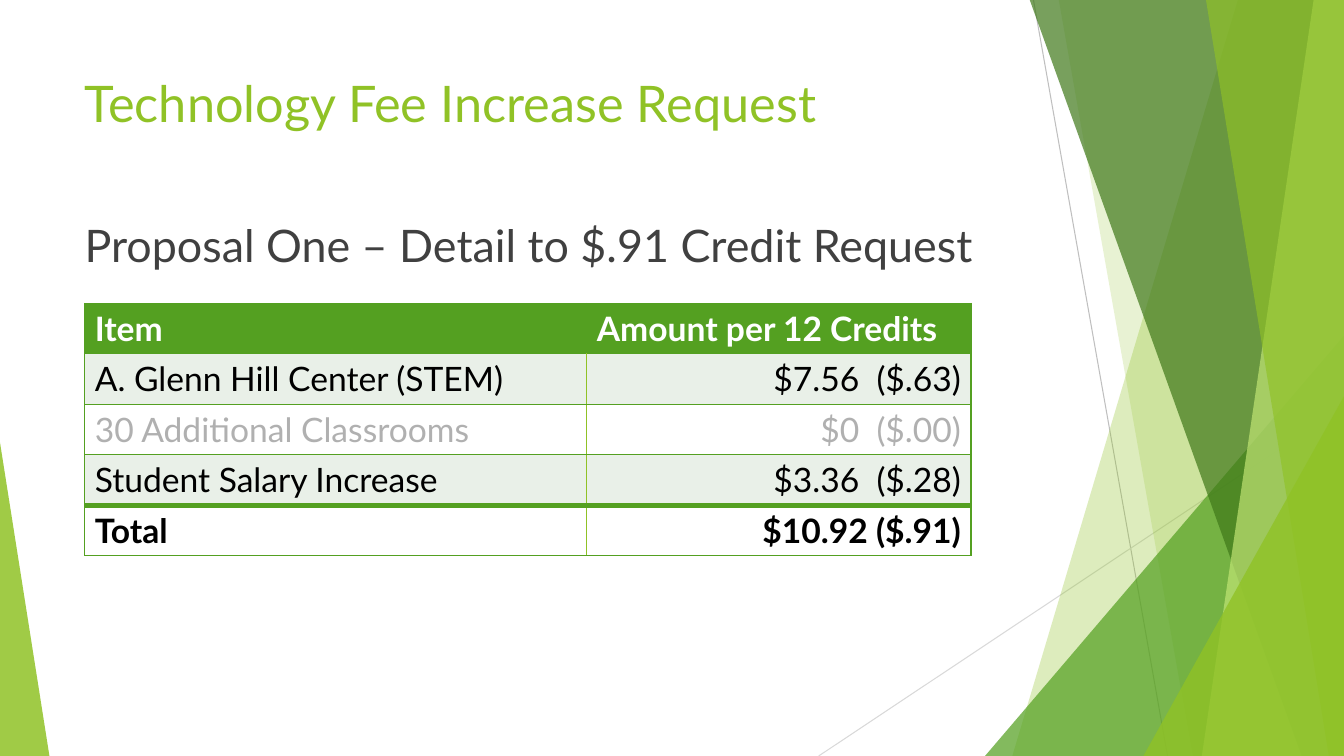
"""Build the technology fee slide: faceted green backdrop, title and fee table."""
from dataclasses import dataclass

from lxml.etree import SubElement
from pptx import Presentation
from pptx.dml.color import RGBColor
from pptx.enum.shapes import MSO_CONNECTOR, MSO_SHAPE
from pptx.enum.text import MSO_ANCHOR, PP_ALIGN
from pptx.oxml.ns import qn
from pptx.util import Inches, Pt

FONT = "Lato"
LIME, GREEN, DARK, PALE = "90C226", "54A021", "3F7819", "C0E474"
WHITE, BLACK, BAND, MUTED, TEXT = "FFFFFF", "000000", "E9F0E8", "B0B0B0", "404040"
WIDTH, HEIGHT, TOP = 13.33, 7.5, -0.01
TABLE_LEFT, TABLE_TOP, ROW_HEIGHT = 0.84, 3.01, 0.5
COLUMNS = (4.98, 3.81)


@dataclass
class Ray:
    start: tuple[float, float]
    end: tuple[float, float]
    color: str


@dataclass
class Facet:
    top_x: float
    bottom_x: float
    color: str
    alpha: int


@dataclass
class Corner:
    left: float
    top: float
    width: float
    peak: float
    color: str
    alpha: int


@dataclass
class FeeRow:
    item: str
    amount: str
    fill: str
    color: str
    bold: bool = False
    top_line: float = 1


RAYS = [
    Ray((10.25, 0), (11.58, HEIGHT), "BFBFBF"),
    Ray((WIDTH, 4.03), (8.12, HEIGHT), "D9D9D9"),
]
BACKDROP = [
    Facet(12.28, 10.04, LIME, 30),
    Facet(10.5, 11.83, LIME, 20),
    Corner(9.77, 3.33, 3.56, 1, GREEN, 72),
    Facet(10.21, 12.91, DARK, 70),
    Facet(13.03, 11.92, PALE, 70),
    Facet(11.96, 13.18, LIME, 65),
    Corner(11.34, 3.93, 1.99, 1, LIME, 80),
    Corner(0, 4.39, 0.49, 0, LIME, 85),
]
FEES = [
    FeeRow("Item", "Amount per 12 Credits", GREEN, WHITE, bold=True),
    FeeRow("A. Glenn Hill Center (STEM)", "$7.56  ($.63)", BAND, BLACK),
    FeeRow("30 Additional Classrooms", "$0  ($.00)", WHITE, MUTED),
    FeeRow("Student Salary Increase", "$3.36  ($.28)", BAND, BLACK),
    FeeRow("Total", "$10.92 ($.91)", WHITE, BLACK, bold=True, top_line=4),
]


def rgb(color: str) -> RGBColor:
    return RGBColor.from_string(color)


def draw_ray(s, ray: Ray) -> None:
    points = [Inches(v) for v in (*ray.start, *ray.end)]
    line = s.shapes.add_connector(MSO_CONNECTOR.STRAIGHT, *points)
    line.line.color.rgb = rgb(ray.color)
    line.line.width = Pt(0.75)
    SubElement(line._element.spPr, qn("a:effectLst"))


def draw_backdrop(s, part: Facet | Corner) -> None:
    if isinstance(part, Facet):
        outline = [(part.top_x, TOP), (WIDTH, TOP), (WIDTH, HEIGHT), (part.bottom_x, HEIGHT)]
        points = [(Inches(x), Inches(y)) for x, y in outline]
        builder = s.shapes.build_freeform(*points[0])
        builder.add_line_segments(points[1:], close=True)
        sp = builder.convert_to_shape()
    else:
        box = (part.left, part.top, part.width, HEIGHT - part.top)
        sp = s.shapes.add_shape(MSO_SHAPE.ISOSCELES_TRIANGLE, *map(Inches, box))
        sp.adjustments[0] = part.peak
    sp.shadow.inherit = False
    sp.line.fill.background()
    sp.fill.solid()
    sp.fill.fore_color.rgb = rgb(part.color)
    clr = sp._element.spPr.find(qn("a:solidFill"))[0]
    SubElement(clr, qn("a:alpha"), val=str(part.alpha * 1000))


def write(tf, text: str, size: float, color: str, bold: bool = False,
          align: PP_ALIGN = PP_ALIGN.LEFT) -> None:
    tf.text = text
    p = tf.paragraphs[0]
    p.alignment = align
    p.font.name = FONT
    p.font.size = Pt(size)
    p.font.bold = bold
    p.font.color.rgb = rgb(color)


def set_borders(cell, borders: dict[str, tuple[str, float]]) -> None:
    tc_pr = cell._tc.get_or_add_tcPr()
    for i, (side, (color, width)) in enumerate(borders.items()):
        ln = SubElement(tc_pr, qn(f"a:ln{side}"), w=str(Pt(width)))
        SubElement(SubElement(ln, qn("a:solidFill")), qn("a:srgbClr"), val=color)
        tc_pr.insert(i, ln)


def draw_table(s, fees: list[FeeRow]) -> None:
    box = (TABLE_LEFT, TABLE_TOP, sum(COLUMNS), ROW_HEIGHT * len(fees))
    table = s.shapes.add_table(len(fees), len(COLUMNS), *map(Inches, box)).table
    for column, width in zip(table.columns, COLUMNS):
        column.width = Inches(width)
    bottom_lines = [fee.top_line for fee in fees[1:]] + [1]
    for row, (fee, bottom_line) in enumerate(zip(fees, bottom_lines)):
        divider = GREEN if row == 0 else LIME
        for col, text in enumerate((fee.item, fee.amount)):
            cell = table.cell(row, col)
            align = PP_ALIGN.RIGHT if row and col else PP_ALIGN.LEFT
            write(cell.text_frame, text, 24, fee.color, fee.bold, align)
            cell.fill.solid()
            cell.fill.fore_color.rgb = rgb(fee.fill)
            set_borders(cell, {
                "L": (divider if col else GREEN, 1),
                "R": (GREEN if col else divider, 1),
                "T": (GREEN, fee.top_line),
                "B": (GREEN, bottom_line),
            })


def main() -> None:
    prs = Presentation()
    prs.slide_width, prs.slide_height = Inches(WIDTH), Inches(HEIGHT)
    s = prs.slides.add_slide(prs.slide_layouts[5])
    for ray in RAYS:
        draw_ray(s, ray)
    for part in BACKDROP:
        draw_backdrop(s, part)

    title = s.shapes.title
    title.left, title.top, title.width, title.height = map(Inches, (0.74, 0.67, 9.4, 1.44))
    title.text_frame.vertical_anchor = MSO_ANCHOR.TOP
    write(title.text_frame, "Technology Fee Increase Request", 36, LIME)

    draw_table(s, FEES)

    subtitle = s.shapes.add_textbox(*map(Inches, (0.74, 2.11, 9.4, 0.87)))
    subtitle.text_frame.word_wrap = True
    write(subtitle.text_frame, "Proposal One – Detail to $.91 Credit Request", 32, TEXT)
    prs.save("out.pptx")


if __name__ == "__main__":
    main()
